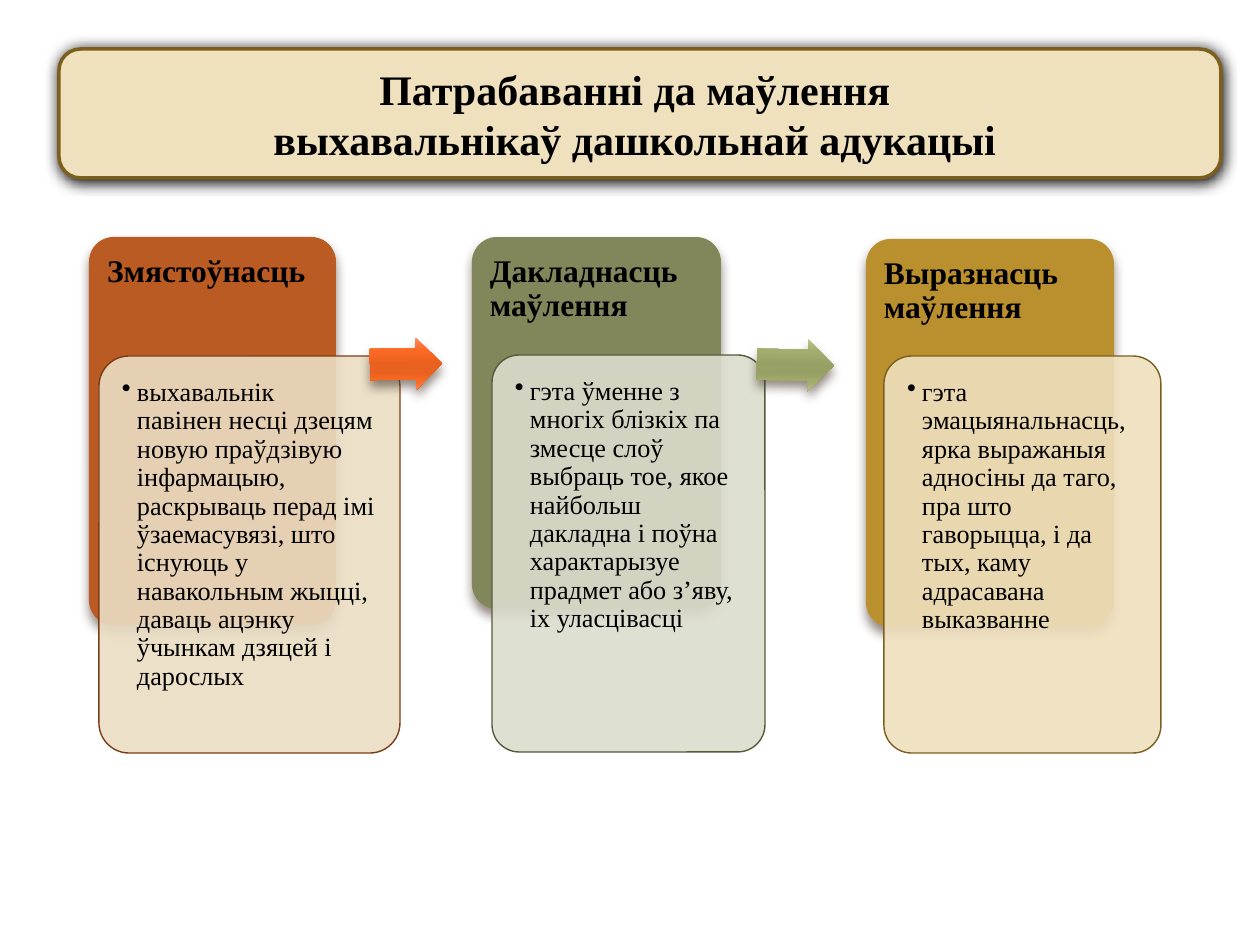
from lxml import etree
from pptx import Presentation
from pptx.dml.color import RGBColor
from pptx.enum.shapes import MSO_SHAPE
from pptx.enum.text import MSO_ANCHOR, PP_ALIGN
from pptx.oxml import parse_xml
from pptx.oxml.ns import qn
from pptx.util import Emu, Pt

ROUNDED, ARROW = MSO_SHAPE.ROUNDED_RECTANGLE, MSO_SHAPE.RIGHT_ARROW
TOP, MIDDLE = MSO_ANCHOR.TOP, MSO_ANCHOR.MIDDLE
LEFT, CENTER = PP_ALIGN.LEFT, PP_ALIGN.CENTER
PX = 914400 / 126
DRAWING = "http://schemas.openxmlformats.org/drawingml/2006/main"

THEME = {
    "font": "Times New Roman", "text": "000000",
    "title_size": 24, "label_size": 18, "body_size": 15,
    "title_fill": "EFE0BE", "title_line": "7C5F1E",
    # colour, opacity %, blur pt, distance pt
    "title_shadow": ("000000", 100, 8.5, 1),
    "card_shadow": ("4E3B30", 60, 6, 4),
    "stops": (0, 25, 50, 65, 80, 100),
}


def add_box(kind, area, fill=None, line=None, line_width=0.79, shadow=None, alpha=100, gradient=()):
    """Add a preset shape with a flat or gradient fill, an outline and a shadow."""
    box = slide.shapes.add_shape(kind, *[Emu(round(v * PX)) for v in area])
    properties = box._element.spPr
    box.shadow.inherit = False
    if gradient:
        stops = "".join(f'<a:gs pos="{pos * 1000}"><a:srgbClr val="{color}"/></a:gs>'
                        for pos, color in zip(THEME["stops"], gradient))
        properties.find(qn("a:prstGeom")).addnext(parse_xml(
            f'<a:gradFill xmlns:a="{DRAWING}" rotWithShape="1"><a:gsLst>{stops}</a:gsLst>'
            '<a:lin ang="5400000" scaled="0"/></a:gradFill>'))
    else:
        box.fill.solid()
        box.fill.fore_color.rgb = RGBColor.from_string(fill)
        if alpha < 100:
            color = properties.find(qn("a:solidFill"))[0]
            etree.SubElement(color, qn("a:alpha"), val=str(alpha * 1000))
    if line:
        box.line.color.rgb = RGBColor.from_string(line)
        box.line.width = Pt(line_width)
    else:
        box.line.fill.background()
    if shadow:
        color, opacity, blur, distance = shadow
        properties.find(qn("a:effectLst")).append(parse_xml(
            f'<a:outerShdw xmlns:a="{DRAWING}" blurRad="{Pt(blur)}" dist="{Pt(distance)}" '
            f'dir="5400000" rotWithShape="0"><a:srgbClr val="{color}">'
            f'<a:alpha val="{opacity * 1000}"/></a:srgbClr></a:outerShdw>'))
    return box


def write_text(box, lines, size, bold=False, align=LEFT, anchor=TOP,
               margins=None, spacing=None, bullet_indent=0):
    """Fill a box with one paragraph per line; margins are left, top, right, bottom in px."""
    frame = box.text_frame
    frame.word_wrap = True
    frame.vertical_anchor = anchor
    if margins:
        (frame.margin_left, frame.margin_top,
         frame.margin_right, frame.margin_bottom) = [Emu(round(m * PX)) for m in margins]
    for index, line in enumerate(lines):
        para = frame.add_paragraph() if index else frame.paragraphs[0]
        para.text = line
        para.alignment = align
        if spacing:
            para.line_spacing = spacing
        if bullet_indent:
            indent = round(bullet_indent * PX)
            para_format = para._p.get_or_add_pPr()
            para_format.set("marL", str(indent))
            para_format.set("indent", str(-indent))
            etree.SubElement(para_format, qn("a:buChar"), char="•")
        for span in para.runs:
            span.font.name = THEME["font"]
            span.font.size = Pt(size)
            span.font.bold = bold
            span.font.color.rgb = RGBColor.from_string(THEME["text"])


deck = Presentation()
deck.slide_width, deck.slide_height = Emu(round(1260 * PX)), Emu(round(945 * PX))
slide = deck.slides.add_slide(deck.slide_layouts[6])

# Title banner
banner = add_box(ROUNDED, (59, 49, 1162, 129), THEME["title_fill"], THEME["title_line"],
                 line_width=2, shadow=THEME["title_shadow"])
write_text(banner, ["Патрабаванні да маўлення ", "выхавальнікаў дашкольнай адукацыі "],
           THEME["title_size"], bold=True, align=CENTER, anchor=MIDDLE)

# Each requirement: a coloured back card, a pale front card, an arrow to the next
requirements = [
    {"label": "Змястоўнасць",
     "body": "выхавальнік\vпавінен несці дзецям новую праўдзівую інфармацыю, раскрываць перад імі "
             "ўзаемасувязі, што існуюць у навакольным жыцці, даваць ацэнку ўчынкам дзяцей і дарослых",
     "back": (89, 237, 247, 388), "front": (99, 356, 301, 397),
     "colors": ("B95B22", "EBDDC3", "7B3D17"),
     "arrow": (370, 338, 72, 52), "turn": 359.1,
     "gradient": ("FF8F62", "FB6A25", "E9611F", "E9611F", "F96924", "FF8554")},
    {"label": "Дакладнасць маўлення",
     "body": "гэта ўменне з многіх блізкіх па змесце слоў выбраць тое, якое найбольш дакладна "
             "і поўна характарызуе прадмет або з’яву, іх уласцівасці",
     "back": (472, 237, 249, 372), "front": (492, 355, 273, 397),
     "colors": ("81875A", "DBDDCD", "565A3C"),
     "arrow": (757, 339, 77, 52), "turn": 1.1,
     "gradient": ("BEC692", "A3AD6E", "97A065", "97A065", "A2AC6D", "B7BF8B")},
    {"label": "Выразнасць маўлення",
     "body": "гэта эмацыянальнасць, ярка выражаныя адносіны да таго, пра што гаворыцца, "
             "і да тых, каму адрасавана выказванне",
     "back": (866, 239, 248, 388), "front": (884, 356, 277, 397),
     "colors": ("BA8F2D", "EFE0BE", "7C5F1E")},
]
for item in requirements:
    back_fill, front_fill, front_line = item["colors"]

    # Back card and its label, which takes the upper two thirds
    back = add_box(ROUNDED, item["back"], back_fill, shadow=THEME["card_shadow"])
    back.adjustments[0] = 0.1
    left, top, width, height = item["back"]
    label = slide.shapes.add_textbox(
        *[Emu(round(v * PX)) for v in (left, top, width, height * 2 / 3)])
    write_text(label, [item["label"]], THEME["label_size"], bold=True,
               margins=(18, 18, 18, 9), spacing=0.9)

    # Front card and its text, set in by 8 px on every side
    front = add_box(ROUNDED, item["front"], front_fill, front_line, alpha=90)
    front.adjustments[0] = 0.1
    left, top, width, height = item["front"]
    body = slide.shapes.add_textbox(
        *[Emu(round(v * PX)) for v in (left + 8, top + 8, width - 16, height - 16)])
    write_text(body, [item["body"]], THEME["body_size"], margins=(15, 15, 15, 15),
               spacing=0.9, bullet_indent=15)

    # Arrow to the next requirement
    if "arrow" in item:
        arrow = add_box(ARROW, item["arrow"], gradient=item["gradient"],
                        shadow=THEME["card_shadow"])
        arrow.adjustments[0], arrow.adjustments[1] = 0.6, 0.5
        arrow.rotation = item["turn"]

deck.save("out.pptx")
